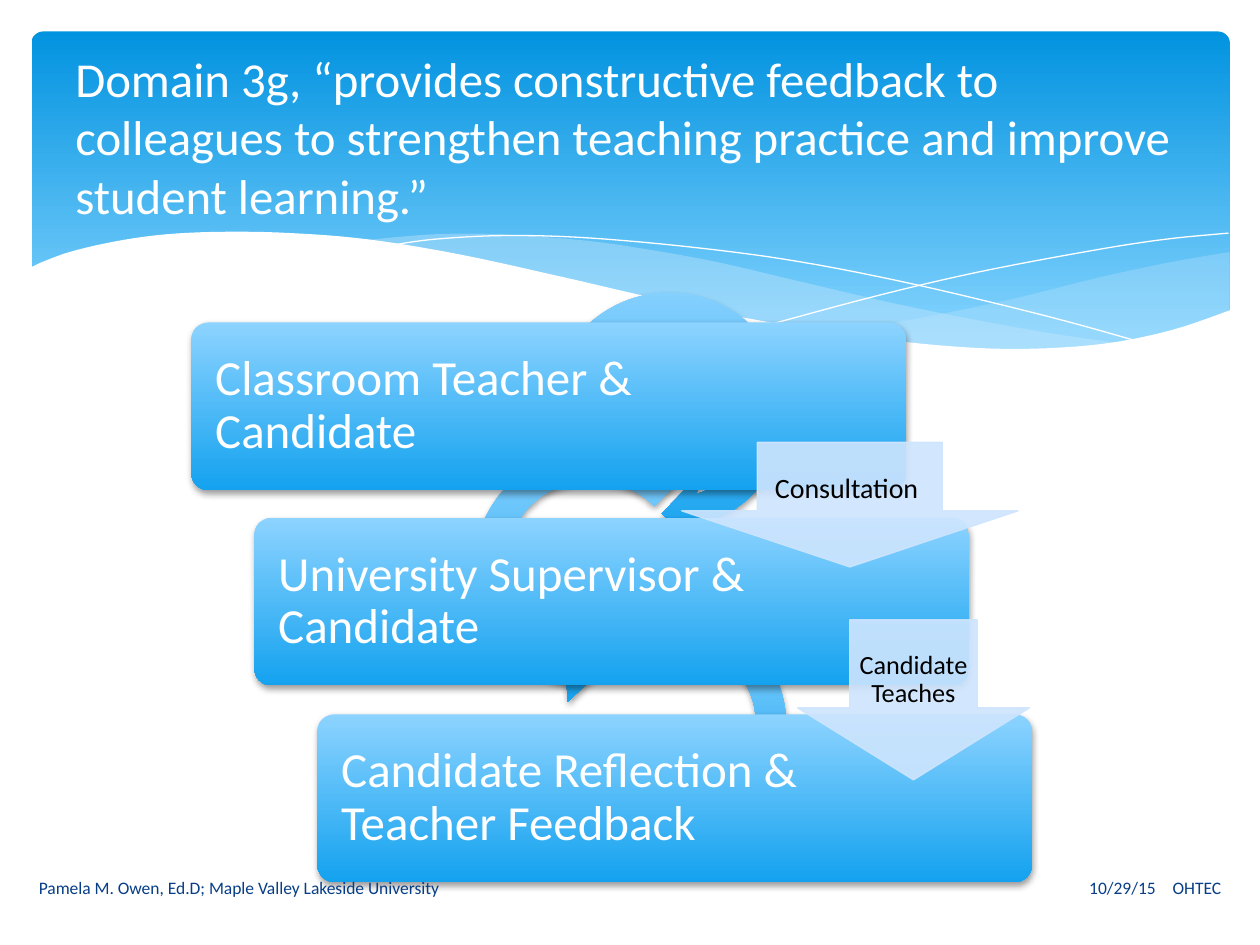
from lxml import etree
from pptx import Presentation
from pptx.dml.color import RGBColor
from pptx.enum.shapes import MSO_SHAPE
from pptx.enum.text import MSO_ANCHOR, PP_ALIGN
from pptx.oxml.ns import qn
from pptx.util import Emu, Pt

PX = 9144
FONT = "Calibri"
ROUND, DOWN = MSO_SHAPE.ROUNDED_RECTANGLE, MSO_SHAPE.DOWN_ARROW
RING, BACK = MSO_SHAPE.CIRCULAR_ARROW, MSO_SHAPE.LEFT_CIRCULAR_ARROW
ARC = MSO_SHAPE.BLOCK_ARC
LEFT, MID, RIGHT = PP_ALIGN.LEFT, PP_ALIGN.CENTER, PP_ALIGN.RIGHT
CENTER = MSO_ANCHOR.MIDDLE
INK = {"white": "FFFFFF", "black": "000000", "navy": "073E87",
       "deep": "0293E0", "sky": "83D3FE", "light": "8CD3FF",
       "blue": "14A2EF", "mist": "C6E7FC", "pale": "CEE5FE"}

BAND = [[(976, 200), (935, 207), (891, 216), (861, 223), (805, 237),
         (753, 248), (706, 257), (661, 265)],
        [(661, 265), (691, 269), (732, 274), (769, 277), (814, 278),
         (854, 276), (889, 272), (921, 265), (949, 257), (976, 247)]]
SWEEP = [[(893, 273), (837, 265), (775, 254), (706, 240), (629, 222),
          (569, 208), (514, 198), (465, 191), (399, 186), (344, 186),
          (286, 191)],
         [(286, 191), (342, 199), (404, 211), (449, 222), (530, 240),
          (601, 255), (665, 266), (722, 274), (773, 277), (828, 278),
          (893, 273)]]
FALL = [[(309, 195), (344, 190), (401, 187), (469, 189), (556, 197),
         (636, 208), (727, 226), (831, 251), (907, 272)]]
RISE = [[(613, 257), (695, 235), (776, 216), (866, 199), (924, 190),
         (975, 185)]]
WAVE = [[(977, 246), (930, 262), (875, 273), (809, 277), (744, 274),
         (668, 265), (579, 250), (503, 233), (447, 220), (365, 202),
         (292, 190), (230, 185), (177, 184), (132, 186), (95, 191),
         (59, 199), (36, 207), (23, 213)],
        [(23, 329), (977, 329)]]


def px(n):
    return Emu(round(n * PX))


def rgb(name):
    return RGBColor.from_string(INK[name])


def fade(shape, alpha):
    for node in list(shape._element.spPr.iter(qn("a:srgbClr"))):
        etree.SubElement(node, qn("a:alpha")).set("val", str(alpha * 1000))


def shade(shape, top, end, stop=1):
    shape.fill.gradient()
    shape.fill.gradient_angle = 270
    for part, name, pos in zip(shape.fill.gradient_stops, (top, end), (0, stop)):
        part.color.rgb = rgb(name)
        part.position = pos


def drop(shape):
    list_ = shape._element.spPr.find(qn("a:effectLst"))
    cast = etree.SubElement(list_, qn("a:outerShdw"), blurRad=str(Pt(4)),
                            dist=str(Pt(2)), dir="5400000", rotWithShape="0")
    tone = etree.SubElement(cast, qn("a:srgbClr"), val=INK["black"])
    etree.SubElement(tone, qn("a:alpha"), val="38000")


def form(slide, kind, box, adj):
    shape = slide.shapes.add_shape(kind, *map(px, box))
    for i, value in enumerate(adj):
        shape.adjustments[i] = value
    shape.shadow.inherit = False
    shape.line.fill.background()
    return shape


def gloss(slide, kind, box, adj):
    shape = form(slide, kind, box, adj)
    shade(shape, "light", "blue")
    drop(shape)
    return shape


def bend(knots, steps=6):
    if len(knots) < 3:
        return knots
    ends = [knots[0], *knots, knots[-1]]
    dots = []
    for a, b, c, d in zip(ends, ends[1:], ends[2:], ends[3:]):
        for t in (i / steps for i in range(steps)):
            dots.append(tuple(
                q + t * (r - p + t * (2 * p - 5 * q + 4 * r - s
                                      + t * (3 * (q - r) + s - p))) / 2
                for p, q, r, s in zip(a, b, c, d)))
    return dots + [knots[-1]]


def free(slide, runs, fill=None, alpha=100):
    dots = [(px(x), px(y)) for run in runs for x, y in bend(run)]
    pen = slide.shapes.build_freeform(*dots[0], scale=1.0)
    pen.add_line_segments(dots[1:], close=bool(fill))
    shape = pen.convert_to_shape()
    shape.shadow.inherit = False
    if fill:
        shape.fill.solid()
        shape.fill.fore_color.rgb = rgb(fill)
        shape.line.fill.background()
        if alpha < 100:
            fade(shape, alpha)
    else:
        shape.fill.background()
        shape.line.color.rgb = rgb("white")
        shape.line.width = Pt(0)


def write(shape, text, size=10, color="navy", align=LEFT, space=None,
          pad=(10, 5, 10, 5)):
    frame = shape.text_frame
    frame.word_wrap = True
    frame.vertical_anchor = CENTER
    (frame.margin_left, frame.margin_top,
     frame.margin_right, frame.margin_bottom) = map(px, pad)
    para = frame.paragraphs[0]
    para.alignment = align
    para.line_spacing = space
    run = para.add_run()
    run.text = text
    run.font.name = FONT
    run.font.size = Pt(size)
    run.font.color.rgb = rgb(color)


def label(slide, box, text, **look):
    write(slide.shapes.add_textbox(*map(px, box)), text, **look)


def arrow(slide, box, text, size):
    shape = form(slide, DOWN, box, (0.45, 0.55))
    shape.adjustments[0] = 0.55
    shape.adjustments[1] = 0.45
    shape.fill.solid()
    shape.fill.fore_color.rgb = rgb("pale")
    shape.line.color.rgb = rgb("pale")
    shape.line.width = Pt(0.75)
    fade(shape, 90)
    write(shape, text, size=size, color="black", align=MID, space=0.9,
          pad=(2, 2, 2, 2))


def header(slide):
    panel = form(slide, ROUND, (25, 25, 951, 270), (0.034,))
    shade(panel, "deep", "sky", 0.9)
    free(slide, BAND, "mist", 29)
    free(slide, SWEEP, "mist", 40)
    free(slide, FALL)
    free(slide, RISE)
    free(slide, WAVE, "white")


def main():
    deck = Presentation()
    deck.slide_width, deck.slide_height = px(1000), px(750)
    slide = deck.slides.add_slide(deck.slide_layouts[6])
    header(slide)

    gloss(slide, RING, (422, 217, 218, 218), (0.11, 11.423, 45, 108, 0.125))
    gloss(slide, BACK, (361, 342, 218, 218), (0.11, 11.423, 63, 189, 0.125))
    gloss(slide, ARC, (437, 482, 187, 188), (135, 108, 0.127))

    label(slide, (50, 50, 900, 158),
          "Domain 3g, “provides constructive feedback to colleagues to "
          "strengthen teaching practice and improve student learning.”",
          size=27.9, color="white", pad=(10, 0, 10, 42))

    steps = ("Classroom Teacher & Candidate",
             "University Supervisor & Candidate",
             "Candidate Reflection & Teacher Feedback")
    for i, text in enumerate(steps):
        card = gloss(slide, ROUND, (152 + 50 * i, 256 + 311 * i // 2, 567, 133),
                     (0.1,))
        write(card, text, size=28, color="white", space=0.9,
              pad=(15, 15, 153, 15))

    arrow(slide, (541, 351, 267, 99), "Consultation ", 16)
    arrow(slide, (633, 492, 184, 127), "Candidate Teaches", 15)

    label(slide, (565, 684, 362, 40), "10/29/15", align=RIGHT)
    label(slide, (909, 684, 70, 40), "OHTEC", align=RIGHT)
    label(slide, (21, 684, 414, 40),
          "Pamela M. Owen, Ed.D; Maple Valley Lakeside University")
    deck.save("out.pptx")


if __name__ == "__main__":
    main()
